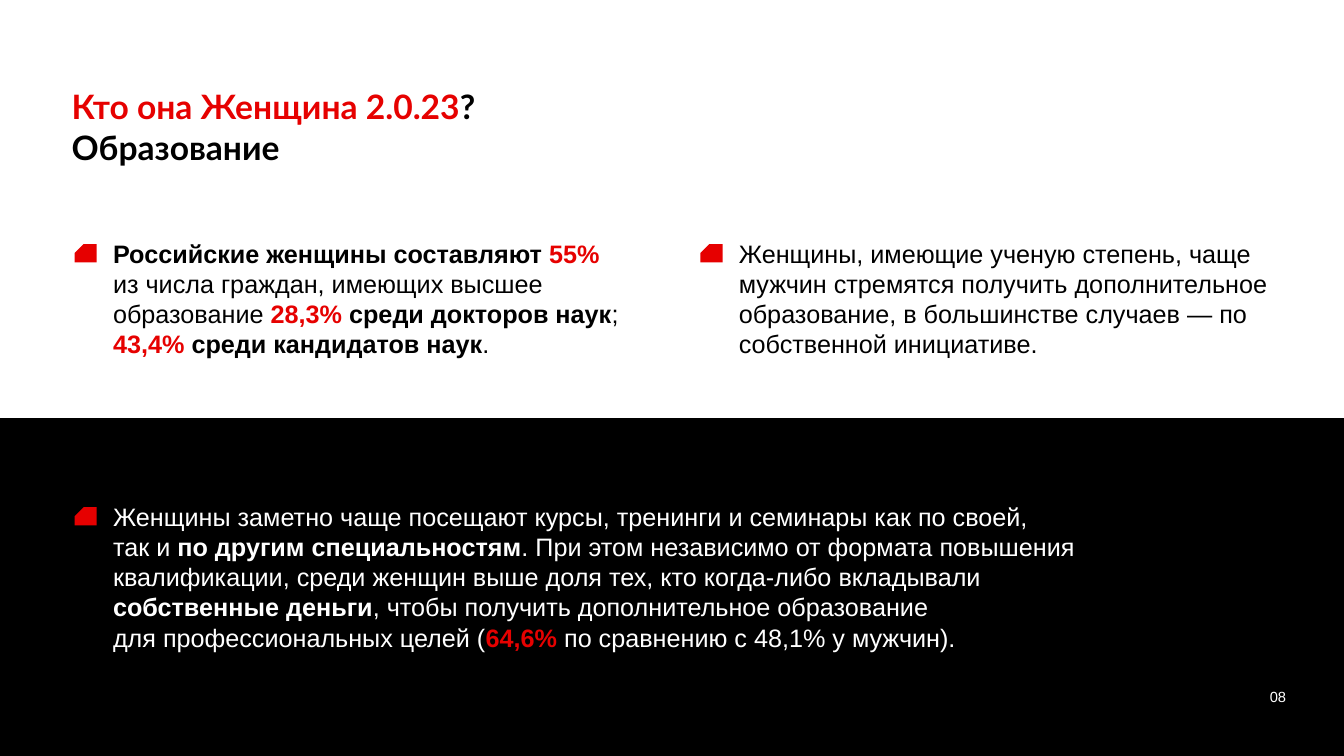
"""Build the slide about women's education."""
from pptx import Presentation
from pptx.dml.color import RGBColor
from pptx.enum.shapes import MSO_SHAPE
from pptx.enum.text import MSO_ANCHOR, MSO_AUTO_SIZE, PP_ALIGN
from pptx.util import Cm, Pt

RECTANGLE, SNIPPED = MSO_SHAPE.RECTANGLE, MSO_SHAPE.SNIP_1_RECTANGLE
TOP, MIDDLE = MSO_ANCHOR.TOP, MSO_ANCHOR.MIDDLE
LEFT, RIGHT = PP_ALIGN.LEFT, PP_ALIGN.RIGHT
NO_AUTOFIT = MSO_AUTO_SIZE.NONE

COLORS = {"black": "000000", "white": "FFFFFF", "marker": "E60000", "accent": "E60100"}
SLIDE_WIDTH, SLIDE_HEIGHT = 33.87, 19.05
BAND_TOP = 10.54

TITLE = [[("Кто она Женщина 2.0.23", "accent"), ("?\nОбразование", "bold")]]
PAGE_NUMBER = [[("08", "plain")]]
SHARES = [
    [("Российские женщины составляют ", "bold"), ("55%", "accent")],
    [
        ("из числа граждан, имеющих высшее образование ", "plain"),
        ("28,3%", "accent"),
        (" среди докторов наук", "bold"),
        ("; ", "plain"),
        ("43,4% ", "accent"),
        ("среди кандидатов наук", "bold"),
        (".", "plain"),
    ],
]
DEGREES = [[(
    "Женщины, имеющие ученую степень, чаще мужчин стремятся получить "
    "дополнительное образование, в большинстве случаев — "
    "по собственной инициативе.", "plain")]]
COURSES = [[
    ("Женщины заметно чаще посещают курсы, тренинги и семинары как по своей,\n"
     "так и ", "plain"),
    ("по другим специальностям", "bold"),
    (". При этом независимо от формата повышения квалификации, среди женщин "
     "выше доля тех, кто когда-либо вкладывали ", "plain"),
    ("собственные деньги", "bold"),
    (", чтобы получить дополнительное образование\n"
     "для профессиональных целей (", "plain"),
    ("64,6% ", "accent"),
    ("по сравнению с 48,1% у мужчин).", "plain"),
]]
POINTS = [
    (SHARES, 1.88, 6.15, 13.97, 3.33, "black"),
    (DEGREES, 17.65, 6.15, 13.97, 3.33, "black"),
    (COURSES, 1.88, 12.78, 26.7, 4.11, "white"),
]


def write_text(shape, paragraphs, size, color="black", font="Arial",
               align=LEFT, anchor=TOP, spacing=None):
    """Fill a shape with paragraphs of styled runs."""
    frame = shape.text_frame
    frame.word_wrap = True
    frame.auto_size = NO_AUTOFIT
    frame.vertical_anchor = anchor
    for index, runs in enumerate(paragraphs):
        paragraph = frame.add_paragraph() if index else frame.paragraphs[0]
        paragraph.alignment = align
        if spacing:
            paragraph.line_spacing = Pt(spacing)
        for text, style in runs:
            for line_index, line in enumerate(text.split("\n")):
                if line_index:
                    paragraph.add_line_break()
                run = paragraph.add_run()
                run.text = line
                run.font.name = font
                run.font.size = Pt(size)
                run.font.bold = style != "plain"
                name = "accent" if style == "accent" else color
                run.font.color.rgb = RGBColor.from_string(COLORS[name])


def add_block(slide, kind, box, color):
    """Add a plain filled shape."""
    shape = slide.shapes.add_shape(kind, *map(Cm, box))
    shape.shadow.inherit = False
    shape.fill.solid()
    shape.fill.fore_color.rgb = RGBColor.from_string(COLORS[color])
    shape.line.fill.background()
    return shape


def add_point(slide, paragraphs, left, top, width, height, color):
    """Add a red marker with its text beside it."""
    marker = add_block(slide, SNIPPED, (left, top, 0.56, 0.46), "marker")
    marker.adjustments[0] = 0.5
    marker._element.spPr.get_or_add_xfrm().set("flipH", "1")
    box = (left + 0.72, top - 0.28, width, height)
    text_box = slide.shapes.add_textbox(*map(Cm, box))
    write_text(text_box, paragraphs, 18, color=color, spacing=21.6)


def main():
    """Compose and save the slide."""
    presentation = Presentation()
    presentation.slide_width = Cm(SLIDE_WIDTH)
    presentation.slide_height = Cm(SLIDE_HEIGHT)
    slide = presentation.slides.add_slide(presentation.slide_layouts[5])

    title = slide.shapes.title
    title.left, title.top, title.width, title.height = map(Cm, (1.55, 1.63, 15.37, 3.12))
    write_text(title, TITLE, 24, font="Lato", anchor=MIDDLE)

    band = (0, BAND_TOP, SLIDE_WIDTH, SLIDE_HEIGHT - BAND_TOP)
    add_block(slide, RECTANGLE, band, "black")
    for point in POINTS:
        add_point(slide, *point)

    number = slide.shapes.add_textbox(*map(Cm, (30.45, 17.04, 2.21, 1.02)))
    write_text(number, PAGE_NUMBER, 10.5, color="white", align=RIGHT, anchor=MIDDLE)
    presentation.save("out.pptx")


if __name__ == "__main__":
    main()
